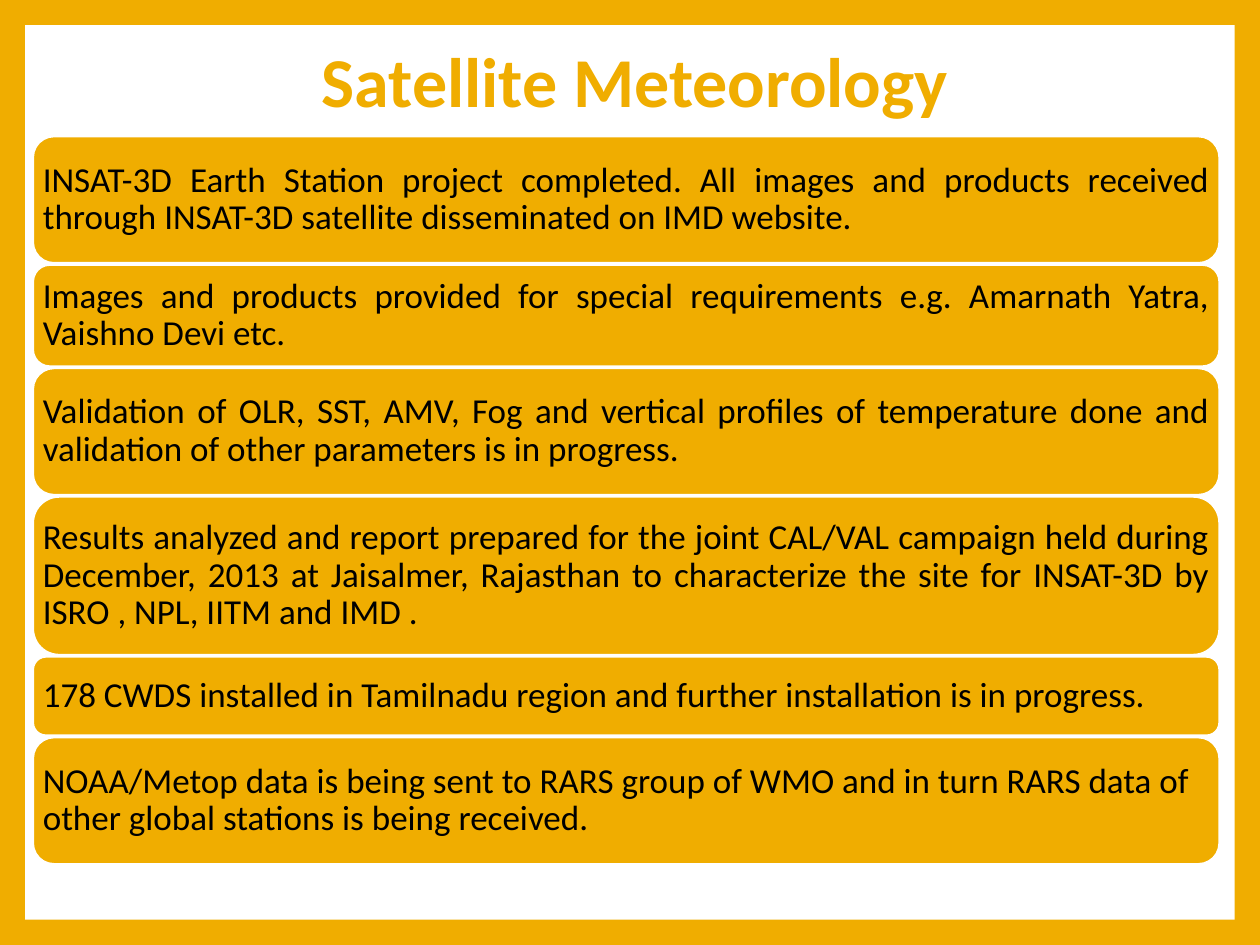
from dataclasses import dataclass

from pptx import Presentation
from pptx.dml.color import RGBColor
from pptx.enum.shapes import MSO_SHAPE as Shape
from pptx.enum.text import MSO_ANCHOR as Anchor, PP_ALIGN as Align
from pptx.util import Inches, Pt


@dataclass(frozen=True)
class Theme:
    amber: RGBColor = RGBColor(0xF0, 0xAD, 0x00)
    white: RGBColor = RGBColor(0xFF, 0xFF, 0xFF)
    black: RGBColor = RGBColor(0x00, 0x00, 0x00)
    font: str = "Calibri"
    title_size: Pt = Pt(40)
    body_size: Pt = Pt(20)
    outline: Pt = Pt(1.5)


THEME = Theme()
CARD_LEFT, CARD_TOP, CARD_WIDTH, CARD_GAP = 0.26, 1.08, 9.42, 0.01
TEXT_MARGIN = 0.08
CORNER_INSET = 0.16667 * 0.29289

ACHIEVEMENTS = [
    (1.01, Align.JUSTIFY, "INSAT-3D Earth Station project completed. All images and products "
     "received through INSAT-3D satellite disseminated on IMD website."),
    (0.81, Align.JUSTIFY, "Images and products provided for special requirements e.g. "
     "Amarnath Yatra, Vaishno Devi etc."),
    (1.01, Align.JUSTIFY, "Validation of OLR, SST, AMV, Fog and vertical profiles of "
     "temperature done and validation of other parameters is in progress."),
    (1.26, Align.JUSTIFY, "Results analyzed and report prepared for the joint CAL/VAL campaign "
     "held during December, 2013 at Jaisalmer, Rajasthan to characterize the site for "
     "INSAT-3D by ISRO , NPL, IITM and IMD ."),
    (0.63, Align.JUSTIFY, "178 CWDS installed in Tamilnadu region and further installation is "
     "in progress."),
    (1.01, Align.LEFT, "NOAA/Metop data is being sent to RARS group of WMO and in turn RARS "
     "data of other global stations is being received."),
]


def apply(target, settings):
    for name, value in settings.items():
        setattr(target, name, value)


def fill_background(slide):
    backdrop = slide.background.fill
    backdrop.solid()
    backdrop.fore_color.rgb = THEME.amber


def write_text(frame, words, align, color, margin, font_settings):
    inset = Inches(margin)
    apply(frame, {
        "word_wrap": True, "vertical_anchor": Anchor.MIDDLE,
        "margin_left": inset, "margin_right": inset,
        "margin_top": inset, "margin_bottom": inset,
    })
    paragraph = frame.paragraphs[0]
    apply(paragraph, {"text": words, "alignment": align, "line_spacing": 0.9})
    apply(paragraph.font, {"name": THEME.font, **font_settings})
    paragraph.font.color.rgb = color


def add_panel(slide, kind, bounds, color):
    panel = slide.shapes.add_shape(kind, *map(Inches, bounds))
    panel.shadow.inherit = False
    panel.fill.solid()
    panel.fill.fore_color.rgb = color
    panel.line.fill.background()
    return panel


def add_title(slide, words):
    title = slide.shapes.add_textbox(*map(Inches, (0.99, 0.25, 8.1, 0.84)))
    write_text(title.text_frame, words, Align.CENTER, THEME.amber, 0.05,
               {"size": THEME.title_size, "bold": True})


def add_card(slide, top, height, align, words):
    card = add_panel(slide, Shape.ROUNDED_RECTANGLE,
                     (CARD_LEFT, top, CARD_WIDTH, height), THEME.amber)
    card.line.color.rgb = THEME.white
    card.line.width = THEME.outline
    margin = TEXT_MARGIN - CORNER_INSET * height
    write_text(card.text_frame, words, align, THEME.black, margin,
               {"size": THEME.body_size})


def main():
    deck = Presentation()
    apply(deck, {"slide_width": Inches(10), "slide_height": Inches(7.5)})
    slide = deck.slides.add_slide(deck.slide_layouts[6])
    fill_background(slide)
    add_panel(slide, Shape.RECTANGLE, (0.2, 0.2, 9.6, 7.1), THEME.white)
    add_title(slide, "Satellite Meteorology")
    top = CARD_TOP
    for height, align, words in ACHIEVEMENTS:
        add_card(slide, top, height, align, words)
        top += height + CARD_GAP
    deck.save("out.pptx")


if __name__ == "__main__":
    main()
